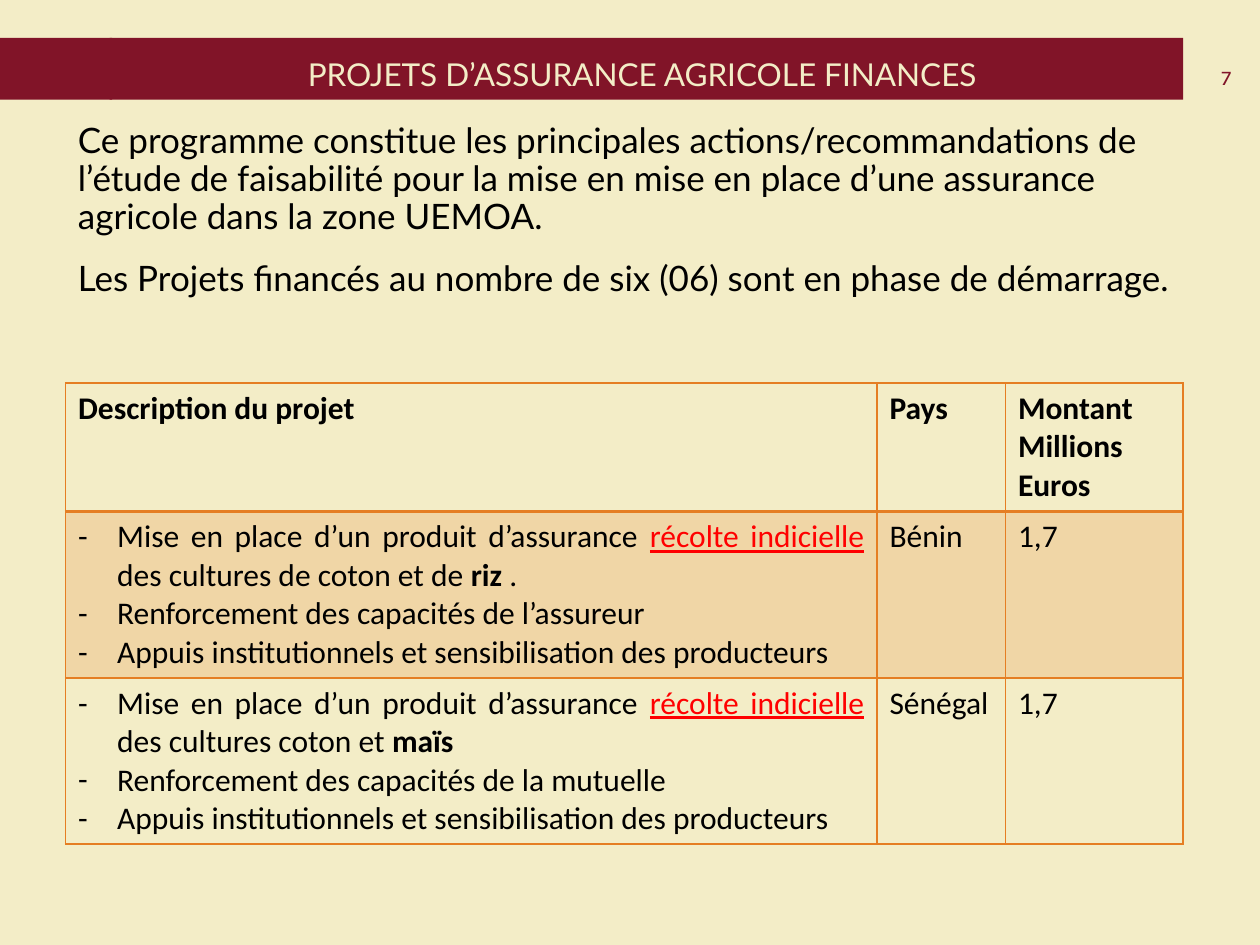
from lxml import etree
from pptx import Presentation
from pptx.dml.color import RGBColor
from pptx.enum.shapes import MSO_SHAPE
from pptx.enum.text import MSO_ANCHOR, MSO_AUTO_SIZE, PP_ALIGN
from pptx.oxml.ns import qn
from pptx.util import Inches, Pt

CREAM = RGBColor(0xF3, 0xED, 0xC7)
WINE = RGBColor(0x81, 0x14, 0x28)
ORANGE = RGBColor(0xE5, 0x7E, 0x23)
RED = RGBColor(0xFF, 0x00, 0x00)
BLACK = RGBColor(0x00, 0x00, 0x00)

TITLE = "PROJETS D’ASSURANCE AGRICOLE FINANCES "
INTRO = [
    "Ce programme constitue les principales actions/recommandations de l’étude de "
    "faisabilité pour la mise en mise en place d’une assurance agricole dans la zone UEMOA.",
    "Les Projets financés au nombre de six (06) sont en phase de démarrage.",
]
HEADERS = [["Description du projet"], ["Pays"], ["Montant", "Millions Euros"]]
# Each project: crop runs as (text, bold), partner, country, amount
PROJECTS = [
    ([("des cultures de coton et de ", False), ("riz", True), (" .", False)],
     "l’assureur", "Bénin", "1,7"),
    ([("des cultures coton et ", False), ("maïs", True)],
     "la mutuelle", "Sénégal", "1,7"),
]
COLUMN_WIDTHS = [6.44, 1.02, 1.41]
ROW_HEIGHTS = [1.02, 1.32, 1.32]


def add_span(para, text, size, face, color=BLACK, bold=False, underline=False):
    span = para.add_run()
    span.text = text
    font = span.font
    font.size, font.name, font.color.rgb = Pt(size), face, color
    font.bold, font.underline = bold, underline


def next_para(frame, index):
    return frame.add_paragraph() if index else frame.paragraphs[0]


def add_banner(page, left, top, width, height):
    # Strip that carries the title colour to the slide edge
    strip = page.shapes.add_shape(MSO_SHAPE.RECTANGLE, 0, top, left + Inches(0.02), height)
    strip.shadow.inherit = False
    strip.fill.solid()
    strip.fill.fore_color.rgb = WINE
    strip.line.fill.background()

    title = page.shapes.title
    title.left, title.top, title.width, title.height = left, top, width, height
    title.fill.solid()
    title.fill.fore_color.rgb = WINE
    frame = title.text_frame
    frame.auto_size = MSO_AUTO_SIZE.NONE
    frame.vertical_anchor = MSO_ANCHOR.BOTTOM
    para = frame.paragraphs[0]
    para.alignment = PP_ALIGN.CENTER
    para.line_spacing = 0.9
    add_span(para, TITLE, 18, "Lato", CREAM)


def add_text_box(page, left, top, width, height):
    frame = page.shapes.add_textbox(left, top, width, height).text_frame
    frame.word_wrap = True
    frame.margin_bottom = 0
    return frame


def add_intro(page, left, top, width, height):
    frame = add_text_box(page, left, top, width, height)
    for index, text in enumerate(INTRO):
        para = next_para(frame, index)
        para.line_spacing = 0.9
        para.space_before = Pt(4 if index else 0)
        para.space_after = Pt(10)
        add_span(para, text, 20, "Lato")


def add_page_number(page, left, top, width, height):
    frame = add_text_box(page, left, top, width, height)
    frame.vertical_anchor = MSO_ANCHOR.MIDDLE
    para = frame.paragraphs[0]
    para.alignment = PP_ALIGN.RIGHT
    add_span(para, "7", 12, "Karla", WINE)


def add_solid(parent, color):
    solid = etree.SubElement(parent, qn("a:solidFill"))
    return etree.SubElement(solid, qn("a:srgbClr"), val=str(color))


def style_cell(cell, shaded, top, bottom):
    properties = cell._tc.get_or_add_tcPr()
    for side, width in (("L", 1), ("R", 1), ("T", top), ("B", bottom)):
        add_solid(etree.SubElement(properties, qn(f"a:ln{side}"), w=str(Pt(width))), ORANGE)
    if shaded:
        etree.SubElement(add_solid(properties, ORANGE), qn("a:alpha"), val="20000")
    else:
        cell.fill.background()


def add_dash(para):
    para.alignment = PP_ALIGN.JUSTIFY
    properties = para._p.get_or_add_pPr()
    indent = Inches(0.31)
    properties.set("marL", str(indent))
    properties.set("indent", str(-indent))
    etree.SubElement(properties, qn("a:buFont"), typeface="Calibri")
    etree.SubElement(properties, qn("a:buChar"), char="-")


def fill_description(frame, crops, partner):
    items = [
        [("Mise en place d’un produit d’assurance ", {}),
         ("récolte indicielle ", {"color": RED, "underline": True})]
        + [(text, {"bold": bold}) for text, bold in crops],
        [(f"Renforcement des capacités de {partner}", {})],
        [("Appuis institutionnels et sensibilisation des producteurs", {})],
    ]
    for index, spans in enumerate(items):
        para = next_para(frame, index)
        add_dash(para)
        for text, style in spans:
            add_span(para, text, 18, "Calibri", **style)


def add_projects(page, left, top, width, height):
    table = page.shapes.add_table(
        len(ROW_HEIGHTS), len(COLUMN_WIDTHS), left, top, width, height).table
    table.first_row = table.horz_banding = False
    for column, size in zip(table.columns, COLUMN_WIDTHS):
        column.width = Inches(size)
    for row, size in zip(table.rows, ROW_HEIGHTS):
        row.height = Inches(size)

    # Header row
    for column, lines in enumerate(HEADERS):
        for index, line in enumerate(lines):
            para = next_para(table.cell(0, column).text_frame, index)
            add_span(para, line, 18, "Calibri", bold=True)

    # One row for each project
    for row, (crops, partner, country, amount) in enumerate(PROJECTS, 1):
        fill_description(table.cell(row, 0).text_frame, crops, partner)
        for column, text in enumerate((country, amount), 1):
            para = table.cell(row, column).text_frame.paragraphs[0]
            add_span(para, text, 18, "Calibri")

    # Orange grid, heavier under the header, odd rows shaded
    for row in range(len(ROW_HEIGHTS)):
        for column in range(len(COLUMN_WIDTHS)):
            style_cell(table.cell(row, column), row % 2 == 1,
                       top=2 if row == 1 else 1, bottom=2 if row == 0 else 1)


def main():
    deck = Presentation()
    deck.slide_width, deck.slide_height = Inches(10), Inches(7.5)
    page = deck.slides.add_slide(deck.slide_layouts[5])
    page.background.fill.solid()
    page.background.fill.fore_color.rgb = CREAM

    add_banner(page, Inches(0.87), Inches(0.3), Inches(8.52), Inches(0.49))
    add_intro(page, Inches(0.52), Inches(0.93), Inches(8.87), Inches(2))
    add_page_number(page, Inches(9.39), Inches(0.39), Inches(0.48), Inches(0.4))
    add_projects(page, Inches(0.52), Inches(3.04), Inches(8.87), Inches(3.66))
    deck.save("out.pptx")


if __name__ == "__main__":
    main()
